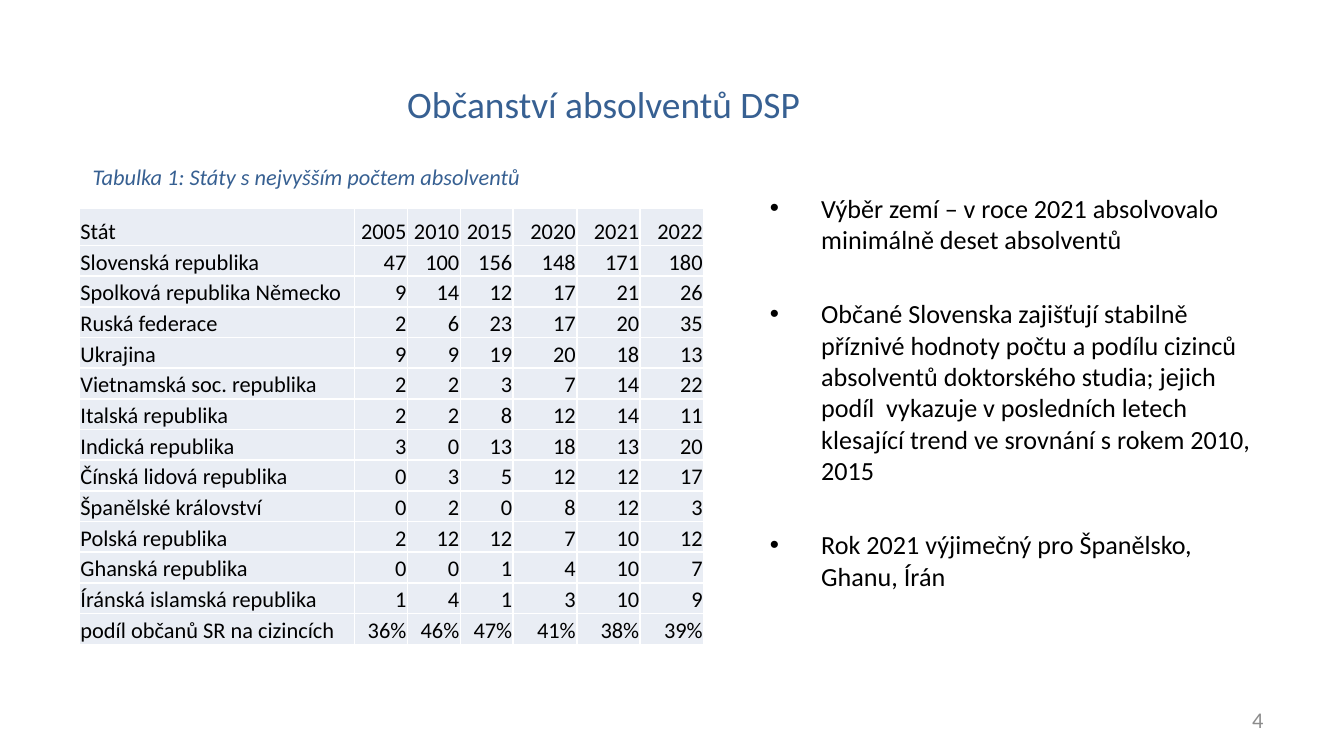
from lxml.etree import SubElement
from pptx import Presentation
from pptx.dml.color import RGBColor
from pptx.enum.text import MSO_ANCHOR, PP_ALIGN
from pptx.oxml.ns import qn
from pptx.util import Cm, Pt

BLUE = RGBColor(0x37, 0x60, 0x92)
BLACK = RGBColor(0x00, 0x00, 0x00)
GRAY = RGBColor(0x8C, 0x8C, 0x8C)
CELL_FILL = RGBColor(0xE9, 0xED, 0xF4)
WHITE = RGBColor(0xFF, 0xFF, 0xFF)

YEARS = ["2005", "2010", "2015", "2020", "2021", "2022"]
GRADUATES = [
    ("Slovenská republika", 47, 100, 156, 148, 171, 180),
    ("Spolková republika Německo", 9, 14, 12, 17, 21, 26),
    ("Ruská federace", 2, 6, 23, 17, 20, 35),
    ("Ukrajina", 9, 9, 19, 20, 18, 13),
    ("Vietnamská soc. republika", 2, 2, 3, 7, 14, 22),
    ("Italská republika", 2, 2, 8, 12, 14, 11),
    ("Indická republika", 3, 0, 13, 18, 13, 20),
    ("Čínská lidová republika", 0, 3, 5, 12, 12, 17),
    ("Španělské království", 0, 2, 0, 8, 12, 3),
    ("Polská republika", 2, 12, 12, 7, 10, 12),
    ("Ghanská republika", 0, 0, 1, 4, 10, 7),
    ("Íránská islamská republika", 1, 4, 1, 3, 10, 9),
]
SLOVAK_SHARE = ("podíl občanů SR na cizincích", "36%", "46%", "47%", "41%", "38%", "39%")
COLUMN_WIDTHS = [5.2] + [1.0] * 3 + [1.2] * 3
HEADER_HEIGHT, ROW_HEIGHT = 0.7, 0.58

FINDINGS = [
    "Výběr zemí – v roce 2021 absolvovalo minimálně deset absolventů",
    "Občané Slovenska zajišťují stabilně příznivé hodnoty počtu a podílu cizinců "
    "absolventů doktorského studia; jejich podíl  vykazuje v posledních letech "
    "klesající trend ve srovnání s rokem 2010, 2015",
    "Rok 2021 výjimečný pro Španělsko, Ghanu, Írán",
]


class SlideBuilder:
    FONT = "Calibri"

    def __init__(self, slide):
        self.slide = slide

    def add_text(self, paragraph, text, size, color, align=PP_ALIGN.LEFT, italic=False):
        paragraph.alignment = align
        run = paragraph.add_run()
        run.text = text
        run.font.name = self.FONT
        run.font.size = Pt(size)
        run.font.italic = italic
        run.font.color.rgb = color

    def title(self, text, left, top, width, height):
        heading = self.slide.shapes.title
        heading.left, heading.top = Cm(left), Cm(top)
        heading.width, heading.height = Cm(width), Cm(height)
        heading.text_frame.vertical_anchor = MSO_ANCHOR.BOTTOM
        self.add_text(heading.text_frame.paragraphs[0], text, 20, BLUE, PP_ALIGN.CENTER)

    def frame(self, left, top, width, height, anchor=MSO_ANCHOR.TOP):
        box = self.slide.shapes.add_textbox(Cm(left), Cm(top), Cm(width), Cm(height))
        box.text_frame.word_wrap = True
        box.text_frame.vertical_anchor = anchor
        return box.text_frame

    def label(self, text, place, color, **style):
        frame = self.frame(*place, anchor=MSO_ANCHOR.MIDDLE)
        self.add_text(frame.paragraphs[0], text, 12, color, **style)

    def bullets(self, items, place, top_inset, gap):
        frame = self.frame(*place)
        frame.margin_top = Cm(top_inset)
        for index, item in enumerate(items):
            paragraph = frame.add_paragraph() if index else frame.paragraphs[0]
            properties = paragraph._p.get_or_add_pPr()
            properties.set("marL", str(Cm(0.97)))
            properties.set("indent", str(-Cm(0.97)))
            SubElement(properties, qn("a:buFont"), typeface="Arial")
            SubElement(properties, qn("a:buChar"), char="•")
            if index:
                paragraph.space_before = Pt(gap)
            self.add_text(paragraph, item, 14, BLACK)

    def border(self, cell):
        properties = cell._tc.get_or_add_tcPr()
        for position, side in enumerate(("lnL", "lnR", "lnT", "lnB")):
            line = SubElement(properties, qn(f"a:{side}"), w=str(Pt(1)))
            fill = SubElement(line, qn("a:solidFill"))
            SubElement(fill, qn("a:srgbClr"), val=str(WHITE))
            properties.insert(position, line)

    def table(self, rows, left, top):
        heights = [HEADER_HEIGHT] + [ROW_HEIGHT] * (len(rows) - 1)
        table = self.slide.shapes.add_table(
            len(rows), len(COLUMN_WIDTHS), Cm(left), Cm(top),
            Cm(sum(COLUMN_WIDTHS)), Cm(sum(heights))).table
        table.first_row = table.horz_banding = False
        for column, width in zip(table.columns, COLUMN_WIDTHS):
            column.width = Cm(width)
        for row, height, values in zip(table.rows, heights, rows):
            row.height = Cm(height)
            for index, (cell, value) in enumerate(zip(row.cells, values)):
                cell.margin_left = cell.margin_right = cell.margin_top = Cm(0.02)
                cell.margin_bottom = 0
                cell.vertical_anchor = MSO_ANCHOR.BOTTOM
                cell.fill.solid()
                cell.fill.fore_color.rgb = CELL_FILL
                self.border(cell)
                align = PP_ALIGN.RIGHT if index else PP_ALIGN.LEFT
                self.add_text(cell.text_frame.paragraphs[0], str(value), 12, BLACK, align)


def main():
    presentation = Presentation()
    presentation.slide_width, presentation.slide_height = Cm(25.4), Cm(14.29)
    builder = SlideBuilder(presentation.slides.add_slide(presentation.slide_layouts[5]))

    # Heading and page number
    builder.title("Občanství absolventů DSP", 1.3, 0.53, 20.22, 1.98)
    builder.label("4", (18.21, 13.23, 5.92, 0.76), GRAY, align=PP_ALIGN.RIGHT)

    # Graduates by country
    builder.table([("Stát", *YEARS), *GRADUATES, SLOVAK_SHARE], 1.5, 3.94)

    # Findings
    builder.bullets(FINDINGS, (14.3, 2.54, 9.83, 8.79), top_inset=1.09, gap=23)

    # Table caption
    builder.label("Tabulka 1: Státy s nejvyšším počtem absolventů",
                  (1.5, 2.95, 11.4, 0.76), BLUE, italic=True)

    presentation.save("out.pptx")


if __name__ == "__main__":
    main()
